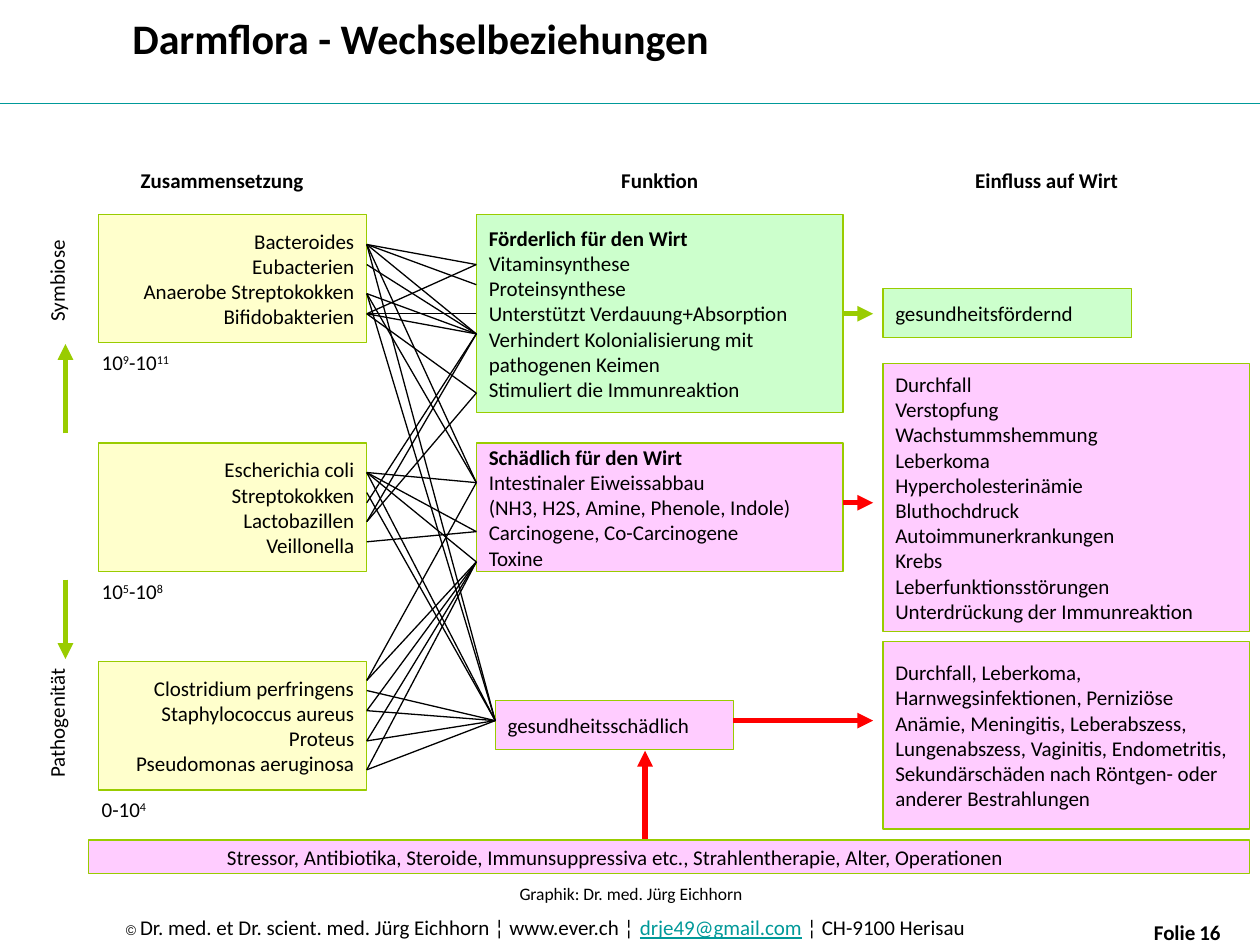
import dataclasses
import pptx
import pptx.dml.color
import pptx.enum.shapes
import pptx.enum.text
import pptx.oxml.ns
import pptx.util
from lxml import etree

Pt = pptx.util.Pt
RGB = pptx.dml.color.RGBColor.from_string
ALIGN = pptx.enum.text.PP_ALIGN
ANCHOR = pptx.enum.text.MSO_ANCHOR
qn = pptx.oxml.ns.qn


@dataclasses.dataclass(frozen=True)
class Theme:
    font: str = "Calibri"
    symbol_font: str = "Arial"
    text: str = "000000"
    teal: str = "009999"
    green: str = "99CC00"
    red: str = "FF0000"
    yellow_fill: str = "FFFFCC"
    green_fill: str = "CCFFCC"
    pink_fill: str = "FFCCFF"
    title: float = 24
    body: float = 12
    credit: float = 10
    small: float = 8
    thin: float = 0.75
    thick: float = 3


theme = Theme()
prs = pptx.Presentation()
prs.slide_width, prs.slide_height = Pt(720), Pt(540)
s = prs.slides.add_slide(prs.slide_layouts[5])


def add_text(box, lines, fill=None, align=ALIGN.LEFT, anchor=ANCHOR.TOP, size=theme.body, bold_lines=0):
    x, y, w, h = map(Pt, box)
    if fill:
        sp = s.shapes.add_shape(pptx.enum.shapes.MSO_SHAPE.RECTANGLE, x, y, w, h)
        sp.shadow.inherit = False
        sp.fill.solid()
        sp.fill.fore_color.rgb = RGB(fill)
        sp.line.color.rgb = RGB(theme.green)
        sp.line.width = Pt(theme.thin)
    else:
        sp = s.shapes.add_textbox(x, y, w, h)
    tf = sp.text_frame
    tf.word_wrap = True
    tf.vertical_anchor = anchor
    for i, line in enumerate(lines):
        p = tf.paragraphs[0] if i == 0 else tf.add_paragraph()
        p.alignment = align
        p.font.name = theme.font
        p.font.size = Pt(size)
        p.font.bold = i < bold_lines
        p.font.color.rgb = RGB(theme.text)
        if line:
            p.add_run().text = line
    return sp


def add_line(start, end, color=theme.text, width=theme.thin, arrow=False):
    c = s.shapes.add_connector(pptx.enum.shapes.MSO_CONNECTOR.STRAIGHT, *map(Pt, (*start, *end)))
    c.line.color.rgb = RGB(color)
    c.line.width = Pt(width)
    if arrow:
        etree.SubElement(c.line._get_or_add_ln(), qn("a:tailEnd"), type="triangle")
    etree.SubElement(c._element.spPr, qn("a:effectLst"))


title = s.shapes.title
title.left, title.top, title.width, title.height = Pt(68.4), Pt(3.6), Pt(462), Pt(36)
tf = title.text_frame
tf.text = "Darmflora - Wechselbeziehungen"
tf.vertical_anchor = ANCHOR.MIDDLE
p = tf.paragraphs[0]
p.alignment = ALIGN.LEFT
p.font.name = theme.font
p.font.size = Pt(theme.title)
p.font.bold = True
p.font.color.rgb = RGB(theme.text)
add_line((0, 59), (720, 59), theme.teal)

for x, w, heading, align in [
    (62, 130, "Zusammensetzung", ALIGN.CENTER),
    (317.5, 119, "Funktion", ALIGN.CENTER),
    (527, 119, "Einfluss auf Wirt", ALIGN.RIGHT),
]:
    add_text((x, 94.5, w, 17), [heading], align=align, anchor=ANCHOR.MIDDLE, bold_lines=1)

left, middle, right = 56.2, 272.2, 504.5
group_w, wide_w, group_h, label_h = 153.4, 209.5, 73.4, 28
groups = [
    (122.4, ["Bacteroides", "Eubacterien", "Anaerobe Streptokokken", "Bifidobakterien"], ["10", "9", "-10", "11"]),
    (253.2, ["Escherichia coli", "Streptokokken", "Lactobazillen", "Veillonella"], ["10", "5", "-10", "8"]),
    (378, ["Clostridium perfringens", "Staphylococcus aureus", "Proteus", "Pseudomonas aeruginosa"], ["0-10", "4"]),
]
for y, species, count in groups:
    add_text((left, y, group_w, group_h), species, theme.yellow_fill, ALIGN.RIGHT, ANCHOR.MIDDLE)
    sp = add_text((51, y + group_h + 0.5, 68, 22), [""])
    for i, part in enumerate(count):
        r = sp.text_frame.paragraphs[0].add_run()
        r.text = part
        if i % 2:
            r._r.get_or_add_rPr().set("baseline", "30000")

beneficial = [
    "Förderlich für den Wirt", "Vitaminsynthese", "Proteinsynthese", "Unterstützt Verdauung+Absorption",
    "Verhindert Kolonialisierung mit pathogenen Keimen", "Stimuliert die Immunreaktion",
]
harmful = [
    "Schädlich für den Wirt", "Intestinaler Eiweissabbau", "(NH3, H2S, Amine, Phenole, Indole)",
    "Carcinogene, Co-Carcinogene", "Toxine",
]
disorders = [
    "Durchfall", "Verstopfung", "Wachstummshemmung", "Leberkoma", "Hypercholesterinämie", "Bluthochdruck",
    "Autoimmunerkrankungen", "Krebs", "Leberfunktionsstörungen", "Unterdrückung der Immunreaktion",
]
diseases = [
    "Durchfall, Leberkoma, Harnwegsinfektionen, Perniziöse Anämie, Meningitis, Leberabszess, Lungenabszess, "
    "Vaginitis, Endometritis, Sekundärschäden nach Röntgen- oder anderer Bestrahlungen"
]
for box, lines, fill, bold_lines in [
    ((middle, 122.4, wide_w, 113.4), beneficial, theme.green_fill, 1),
    ((middle, 253.2, wide_w, group_h), harmful, theme.pink_fill, 1),
    ((right, 164.8, 142, 28), ["gesundheitsfördernd"], theme.green_fill, 0),
    ((right, 207.8, wide_w, 153), disorders, theme.pink_fill, 0),
    ((283, 400.5, 136, 28), ["gesundheitsschädlich"], theme.pink_fill, 0),
    ((right, 366.7, wide_w, 107), diseases, theme.pink_fill, 0),
]:
    add_text(box, lines, fill, anchor=ANCHOR.MIDDLE, bold_lines=bold_lines)

sp = add_text(
    (50.4, 480, 663.8, 19.4),
    ["Stressor, Antibiotika, Steroide, Immunsuppressiva etc., Strahlentherapie, Alter, Operationen"],
    theme.pink_fill, ALIGN.CENTER, ANCHOR.MIDDLE,
)
sp.text_frame.margin_right = Pt(68.4)

for y, h, label in [(374.4, 77, "Pathogenität"), (124.6, 66.2, "Symbiose")]:
    sp = add_text((21.6, y, 28.8, h), [label])
    sp.text_frame._txBody.bodyPr.set("vert", "vert270")

for start, end, color in [
    ((481.7, 179.3), (499, 179.3), theme.green),
    ((481.7, 287.3), (499, 287.3), theme.red),
    ((419, 411.8), (499, 411.8), theme.red),
    ((368.6, 479.5), (368.6, 429), theme.red),
    ((37.4, 247.7), (37.4, 196.6), theme.green),
    ((37.4, 331.2), (37.4, 376.6), theme.green),
]:
    add_line(start, end, color, theme.thick, True)

links = {
    (283, 411.8): [139.7, 167.8, 270, 281.5, 394.6, 406.1, 423.4, 439.9],
    (middle, 321.1): [270, 388.8, 406.1, 423.4, 439.9],
    (middle, 303.8): [270, 309.6],
    (middle, 275.8): [139.7, 167.8, 270, 388.8],
    (middle, 224.6): [179.3, 298.1],
    (middle, 190.8): [139.7, 151.2, 167.8, 179.3, 287.3, 298.1],
    (middle, 179.3): [179.3],
    (middle, 162.7): [139.7],
    (middle, 151.2): [139.7, 179.3],
}
for end, starts in links.items():
    for y in starts:
        add_line((left + group_w, y), end)

add_text((281, 501, 159, 19.4), ["Graphik: Dr. med. Jürg Eichhorn"], align=ALIGN.CENTER, size=theme.credit)

for box, runs, bold in [
    ((64.8, 519, 584, 21.6), [
        ("© ", True, False),
        ("Dr. med. et Dr. scient. med. Jürg Eichhorn ¦ www.ever.ch ¦ ", False, False),
        ("drje49@gmail.com", False, True),
        (" ¦ CH-9100 Herisau", False, False),
    ], 0),
    ((652.3, 522, 67.7, 21.6), [("Folie", False, False), (" ", True, False), ("16", False, False)], 1),
]:
    p = add_text(box, [""], bold_lines=bold).text_frame.paragraphs[0]
    for text, small, accent in runs:
        r = p.add_run()
        r.text = text
        if small:
            r.font.name = theme.symbol_font
            r.font.size = Pt(theme.small)
        if accent:
            r.font.color.rgb = RGB(theme.teal)
            r.font.underline = True

prs.save("out.pptx")
